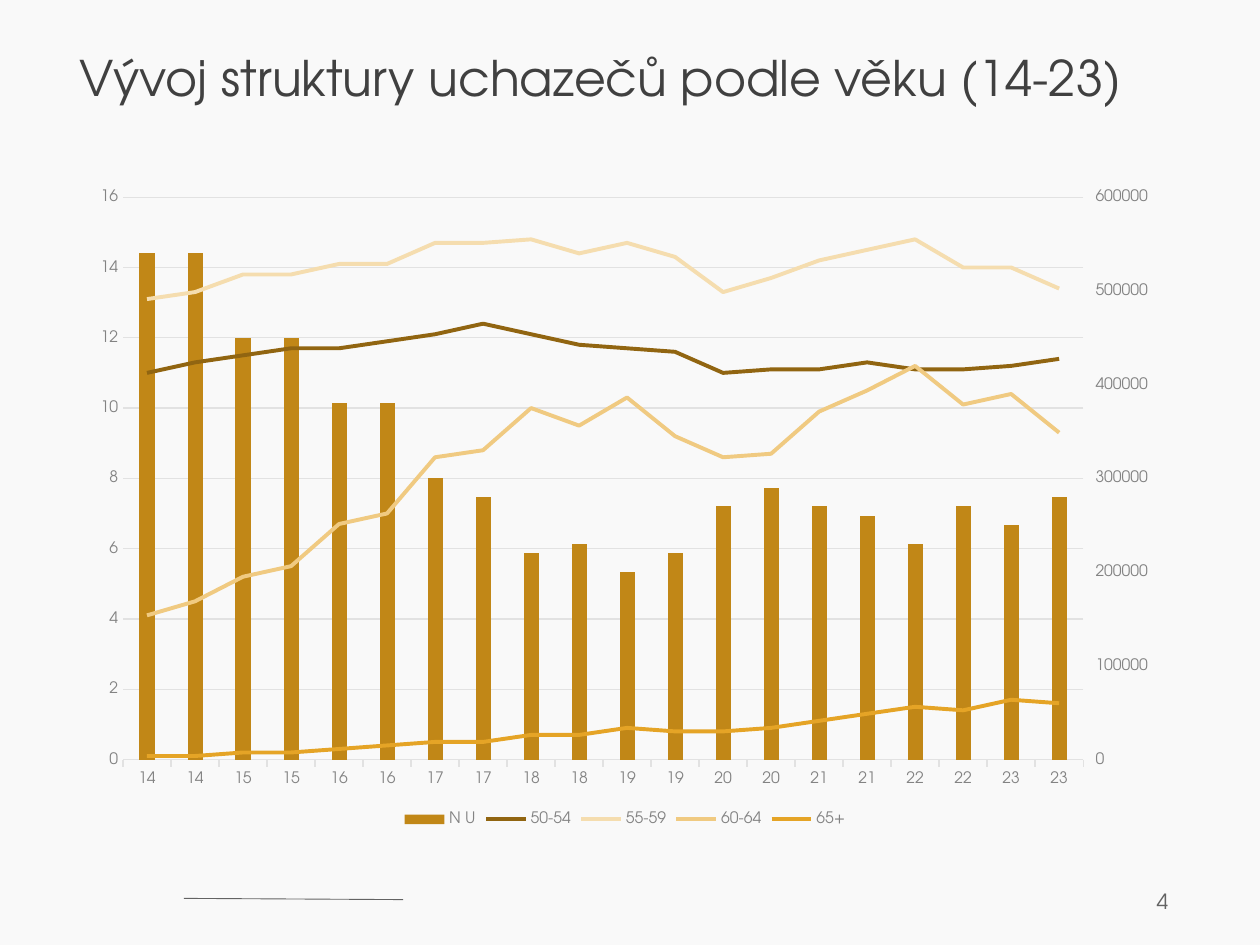
from copy import deepcopy
from dataclasses import dataclass

from lxml import etree
from pptx import Presentation
from pptx.chart.axis import ValueAxis
from pptx.chart.data import CategoryChartData
from pptx.dml.color import RGBColor
from pptx.enum.chart import (XL_CHART_TYPE, XL_LEGEND_POSITION,
                             XL_MARKER_STYLE, XL_TICK_MARK)
from pptx.enum.shapes import MSO_CONNECTOR
from pptx.enum.text import MSO_ANCHOR, MSO_AUTO_SIZE, PP_ALIGN
from pptx.oxml import parse_xml
from pptx.oxml.ns import nsdecls, qn
from pptx.util import Inches, Pt

COLUMNS = XL_CHART_TYPE.COLUMN_CLUSTERED
LEGEND_BOTTOM = XL_LEGEND_POSITION.BOTTOM
NO_MARKER = XL_MARKER_STYLE.NONE
TICK_OUT, TICK_NONE = XL_TICK_MARK.OUTSIDE, XL_TICK_MARK.NONE
STRAIGHT = MSO_CONNECTOR.STRAIGHT
TOP, MIDDLE = MSO_ANCHOR.TOP, MSO_ANCHOR.MIDDLE
LEFT, RIGHT = PP_ALIGN.LEFT, PP_ALIGN.RIGHT
NO_AUTOFIT = MSO_AUTO_SIZE.NONE

FONT = "TeX Gyre Adventor"
BACKGROUND, INK, GREY = "F9F9F9", "404040", "636363"
LABEL, GRID = "838383", "E2E2E2"
COUNT_CAT_ID, COUNT_VAL_ID = "5001", "5002"


@dataclass
class ChartSeries:
    name: str
    color: str
    readings: list[float]


# Half-yearly readings, two for each year
HALF_YEARS = [str(year) for year in range(14, 24) for _ in range(2)]
APPLICANTS = ChartSeries("N U", "C18717", [
    540000, 540000, 450000, 450000, 380000, 380000, 300000, 280000, 220000, 230000,
    200000, 220000, 270000, 290000, 270000, 260000, 230000, 270000, 250000, 280000])
AGE_GROUPS = [
    ChartSeries("50-54", "916511", [
        11, 11.3, 11.5, 11.7, 11.7, 11.9, 12.1, 12.4, 12.1, 11.8,
        11.7, 11.6, 11, 11.1, 11.1, 11.3, 11.1, 11.1, 11.2, 11.4]),
    ChartSeries("55-59", "F5DDAF", [
        13.1, 13.3, 13.8, 13.8, 14.1, 14.1, 14.7, 14.7, 14.8, 14.4,
        14.7, 14.3, 13.3, 13.7, 14.2, 14.5, 14.8, 14, 14, 13.4]),
    ChartSeries("60-64", "F0CA81", [
        4.1, 4.5, 5.2, 5.5, 6.7, 7, 8.6, 8.8, 10, 9.5,
        10.3, 9.2, 8.6, 8.7, 9.9, 10.5, 11.2, 10.1, 10.4, 9.3]),
    ChartSeries("65+", "E5A426", [
        0.1, 0.1, 0.2, 0.2, 0.3, 0.4, 0.5, 0.5, 0.7, 0.7,
        0.9, 0.8, 0.8, 0.9, 1.1, 1.3, 1.5, 1.4, 1.7, 1.6]),
]


def rgb(value: str) -> RGBColor:
    return RGBColor.from_string(value)


def assign(target, values: dict) -> None:
    for attribute, value in values.items():
        setattr(target, attribute, value)


def style_font(font, size: float, color: str) -> None:
    assign(font, {"name": FONT, "size": Pt(size)})
    font.color.rgb = rgb(color)


def style_line(line, color: str, width: float) -> None:
    line.color.rgb = rgb(color)
    line.width = Pt(width)


def write_text(shape, text: str, size: float, color: str, align, anchor,
               margin: float) -> None:
    frame = shape.text_frame
    assign(frame, {"text": text, "word_wrap": True, "auto_size": NO_AUTOFIT,
                   "vertical_anchor": anchor,
                   "margin_left": Inches(margin), "margin_right": Inches(margin),
                   "margin_top": Inches(margin / 2), "margin_bottom": Inches(margin / 2)})
    paragraph = frame.paragraphs[0]
    paragraph.alignment = align
    style_font(paragraph.runs[0].font, size, color)


def move_to_lines(plot_area) -> None:
    """Turn every series after the first into a line on the existing axes."""
    columns = plot_area.find(qn("c:barChart"))
    lines = parse_xml(f'<c:lineChart {nsdecls("c")}><c:grouping val="standard"/>'
                      '<c:varyColors val="0"/></c:lineChart>')
    for series in columns.findall(qn("c:ser"))[1:]:
        for bar_only in series.findall(qn("c:invertIfNegative")):
            series.remove(bar_only)
        lines.append(series)
    etree.SubElement(lines, qn("c:marker")).set("val", "1")
    for axis_id in columns.findall(qn("c:axId")):
        lines.append(deepcopy(axis_id))
    columns.addnext(lines)


def add_count_axes(plot_area) -> ValueAxis:
    """Give the columns a hidden category axis and a value axis at the right."""
    columns = plot_area.find(qn("c:barChart"))
    categories = deepcopy(plot_area.find(qn("c:catAx")))
    counts = deepcopy(plot_area.find(qn("c:valAx")))
    for axis, own, other in ((categories, COUNT_CAT_ID, COUNT_VAL_ID),
                             (counts, COUNT_VAL_ID, COUNT_CAT_ID)):
        axis.find(qn("c:axId")).set("val", own)
        axis.find(qn("c:crossAx")).set("val", other)
    for axis_id, value in zip(columns.findall(qn("c:axId")), (COUNT_CAT_ID, COUNT_VAL_ID)):
        axis_id.set("val", value)
    categories.find(qn("c:delete")).set("val", "1")
    counts.find(qn("c:axPos")).set("val", "r")
    counts.find(qn("c:crosses")).set("val", "max")
    plot_area.find(qn("c:valAx")).addnext(counts)
    counts.addnext(categories)
    return ValueAxis(counts)


def set_plot_layout(plot_area, x: float, y: float, w: float, h: float) -> None:
    for old in plot_area.findall(qn("c:layout")):
        plot_area.remove(old)
    sizes = "".join(f'<c:{key} val="{value}"/>'
                    for key, value in (("x", x), ("y", y), ("w", w), ("h", h)))
    plot_area.insert(0, parse_xml(
        f'<c:layout {nsdecls("c")}><c:manualLayout><c:layoutTarget val="inner"/>'
        f'<c:xMode val="edge"/><c:yMode val="edge"/>{sizes}</c:manualLayout></c:layout>'))


def add_age_chart(slide) -> None:
    data = CategoryChartData()
    data.categories = HALF_YEARS
    for series in [APPLICANTS, *AGE_GROUPS]:
        data.add_series(series.name, series.readings)
    chart = slide.shapes.add_chart(COLUMNS, Inches(0.63), Inches(1.41),
                                   Inches(8.66), Inches(5.19), data).chart
    assign(chart, {"has_title": False, "has_legend": True})
    style_font(chart.font, 10, INK)
    assign(chart.legend, {"position": LEGEND_BOTTOM, "include_in_layout": False})
    style_font(chart.legend.font, 9, LABEL)
    assign(chart.plots[0], {"gap_width": 219, "vary_by_categories": False})

    # Share axis at the left, half-years at the bottom
    half_years, shares = chart.category_axis, chart.value_axis
    for axis in (half_years, shares):
        style_font(axis.tick_labels.font, 9, LABEL)
    half_years.major_tick_mark = TICK_OUT
    style_line(half_years.format.line, GRID, 0.75)
    assign(shares, {"minimum_scale": 0, "maximum_scale": 16, "major_unit": 2,
                    "major_tick_mark": TICK_NONE, "has_major_gridlines": True})
    shares.format.line.fill.background()
    style_line(shares.major_gridlines.format.line, GRID, 0.75)

    # Lines for the age groups, columns on their own axis
    plot_area = half_years._element.getparent()
    move_to_lines(plot_area)
    counts = add_count_axes(plot_area)
    assign(counts, {"maximum_scale": 600000, "major_unit": 100000,
                    "major_tick_mark": TICK_OUT, "has_major_gridlines": False})
    set_plot_layout(plot_area, 0.04, 0.03, 0.88, 0.86)

    series_by_name = {series.name: series for plot in chart.plots for series in plot.series}
    column_fill = series_by_name[APPLICANTS.name].format.fill
    column_fill.solid()
    column_fill.fore_color.rgb = rgb(APPLICANTS.color)
    for group in AGE_GROUPS:
        age_line = series_by_name[group.name]
        age_line.smooth = False
        age_line.marker.style = NO_MARKER
        style_line(age_line.format.line, group.color, 2.25)


def main() -> None:
    prs = Presentation()
    assign(prs, {"slide_width": Inches(10), "slide_height": Inches(7.5)})
    slide = prs.slides.add_slide(prs.slide_layouts[5])
    slide.background.fill.solid()
    slide.background.fill.fore_color.rgb = rgb(BACKGROUND)

    # Footer rule and page number
    rule = slide.shapes.add_connector(STRAIGHT, Inches(1.46), Inches(7.13),
                                      Inches(3.2), Inches(7.14))
    style_line(rule.line, GREY, 0.5)
    etree.SubElement(rule._element.spPr, qn("a:effectLst"))
    page_number = slide.shapes.add_textbox(Inches(7.12), Inches(6.95),
                                           Inches(2.25), Inches(0.4))
    write_text(page_number, "4", 12, GREY, RIGHT, MIDDLE, 0.1)

    # Title
    title = slide.shapes.title
    assign(title, {"left": Inches(0.63), "top": Inches(0.47),
                   "width": Inches(8.74), "height": Inches(0.4)})
    write_text(title, "Vývoj struktury uchazečů podle věku (14-23)", 28, INK, LEFT, TOP, 0)
    assign(title.text_frame.paragraphs[0], {"line_spacing": 0.8, "space_before": Pt(0)})

    add_age_chart(slide)
    prs.save("out.pptx")


if __name__ == "__main__":
    main()
